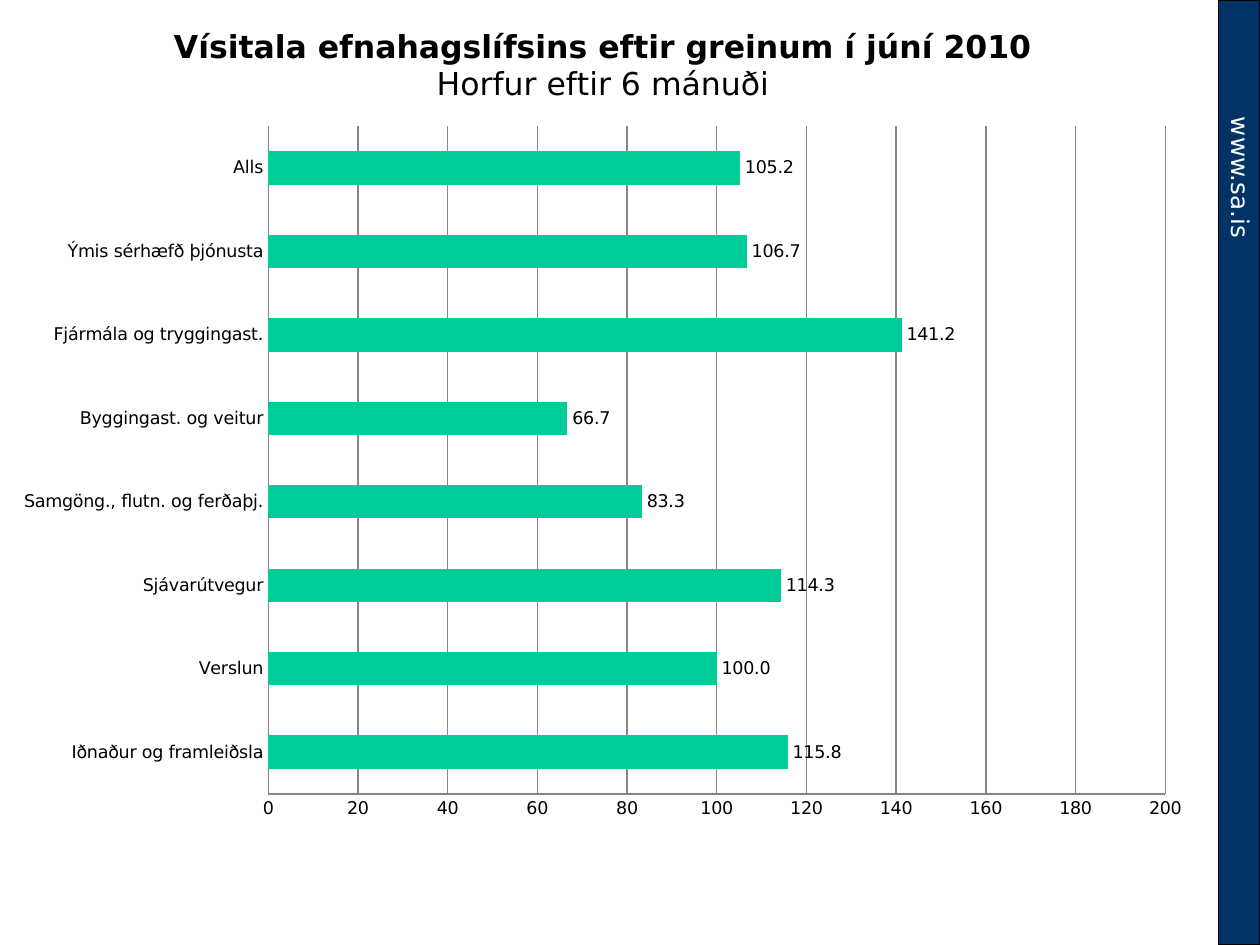
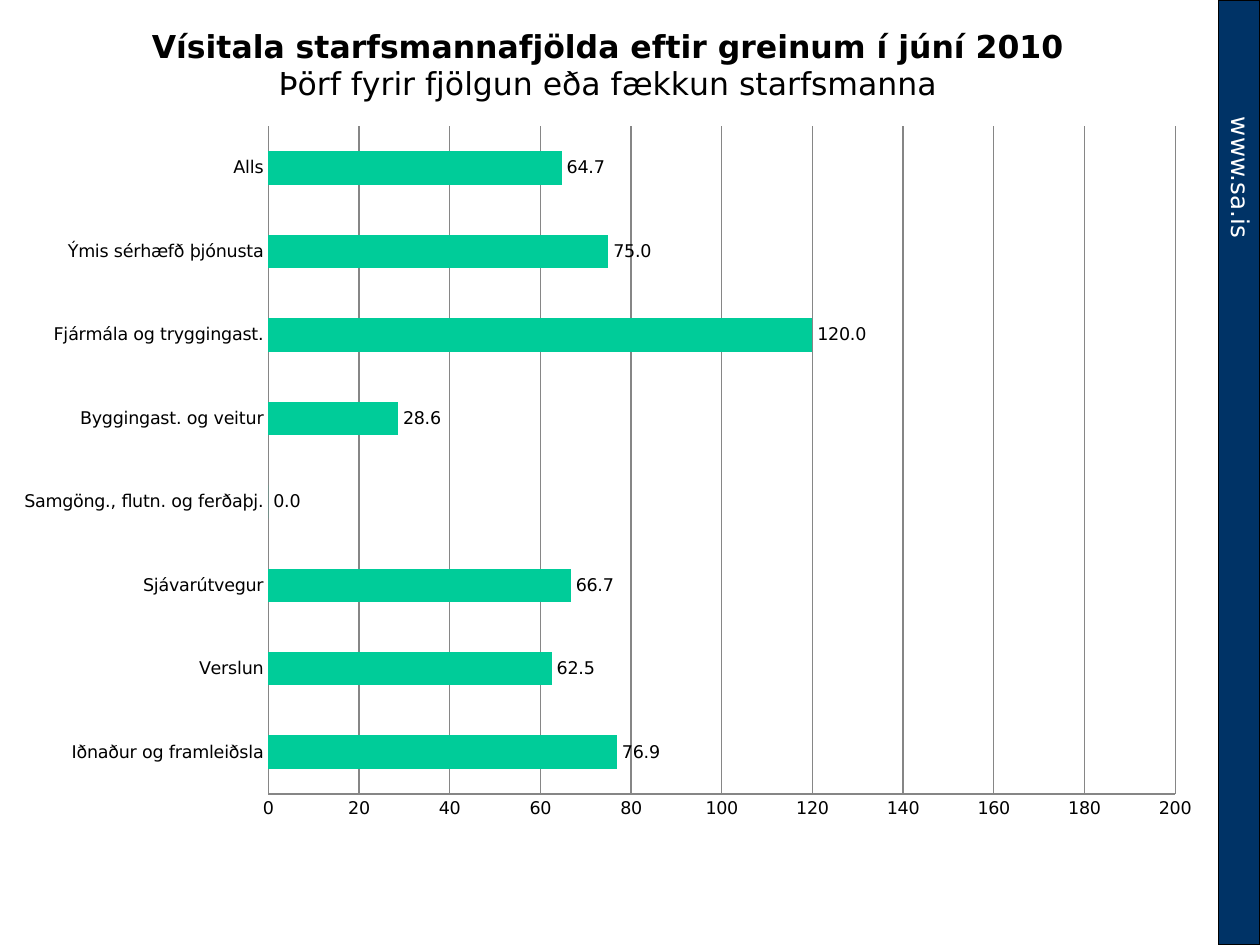
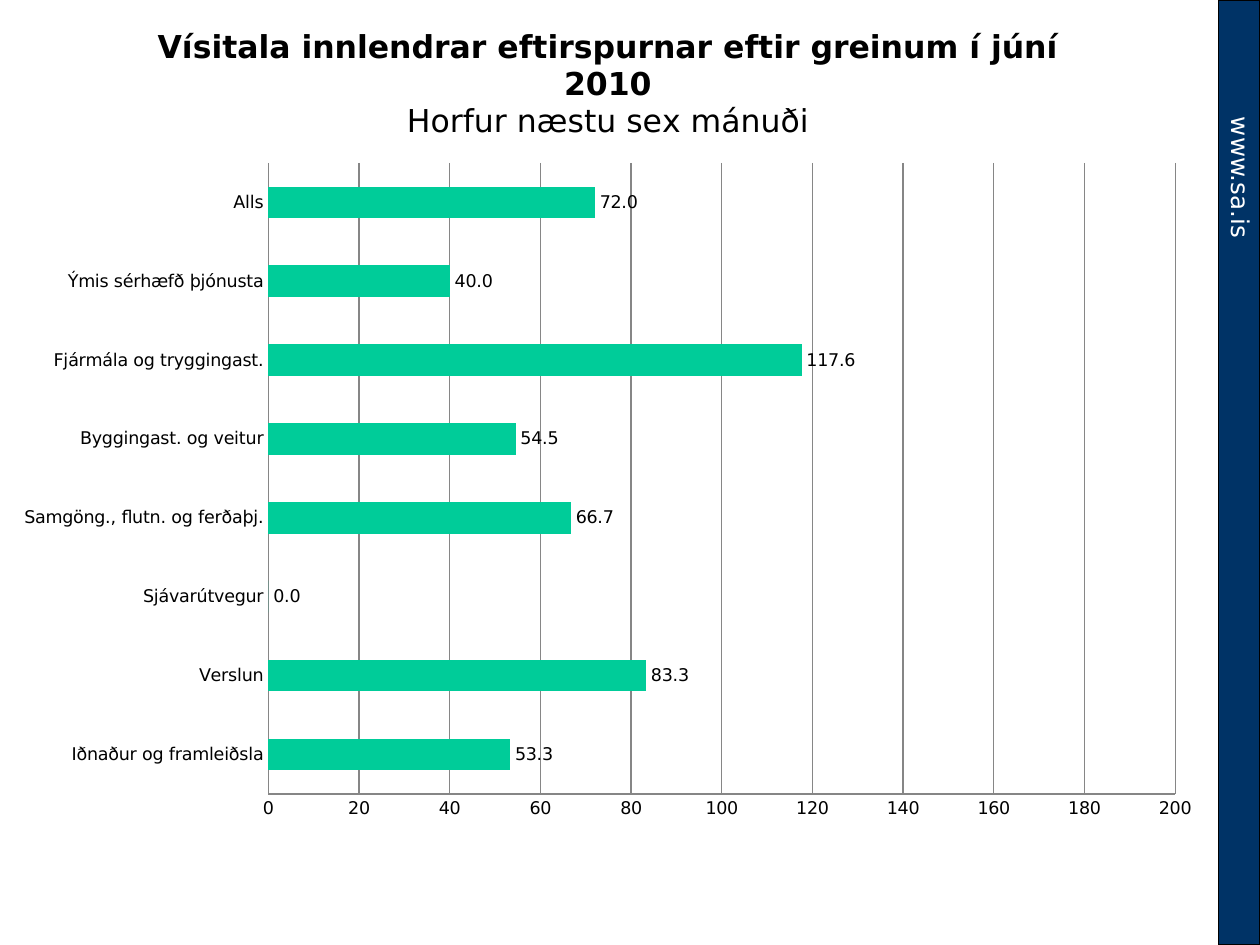
import dataclasses

import pptx
import pptx.chart.axis
import pptx.chart.chart
import pptx.chart.data
import pptx.dml.color
import pptx.enum.chart
import pptx.enum.shapes
import pptx.enum.text
import pptx.slide
import pptx.text.text
import pptx.util

Pt = pptx.util.Pt
RGB = pptx.dml.color.RGBColor


# Theme and shared geometry
@dataclasses.dataclass(frozen=True)
class Theme:
    font: str = "DejaVu Sans"
    text: RGB = RGB(0x00, 0x00, 0x00)
    background: RGB = RGB(0xFF, 0xFF, 0xFF)
    band: RGB = RGB(0x00, 0x33, 0x66)
    bar: RGB = RGB(0x00, 0xCC, 0x99)
    rule: RGB = RGB(0x86, 0x86, 0x86)
    title_size: float = 18
    address_size: float = 14
    label_size: float = 10
    line_width: float = 0.75


THEME = Theme()
SLIDE_WIDTH, SLIDE_HEIGHT = 720, 540
BAND_WIDTH = 23.76
ADDRESS_LENGTH = 131.76
ADDRESS_CENTRE_Y = 125.64
CHART_HEIGHT = 477.36

SECTORS = (
    "Iðnaður og framleiðsla",
    "Verslun",
    "Sjávarútvegur",
    "Samgöng., flutn. og ferðaþj.",
    "Byggingast. og veitur",
    "Fjármála og tryggingast.",
    "Ýmis sérhæfð þjónusta",
    "Alls",
)


# Content of the slides
@dataclasses.dataclass(frozen=True)
class SectorIndex:
    title: str
    subtitle: str
    values: tuple[float, ...]
    width: float = 694.8


INDICES = (
    SectorIndex(
        "Vísitala efnahagslífsins eftir greinum í júní 2010",
        "Horfur eftir 6 mánuði",
        (115.8, 100, 114.3, 83.3, 66.7, 141.2, 106.7, 105.2),
        width=689.04,
    ),
    SectorIndex(
        "Vísitala starfsmannafjölda eftir greinum í júní 2010",
        "Þörf fyrir fjölgun eða fækkun starfsmanna",
        (76.9, 62.5, 66.7, 0, 28.6, 120, 75, 64.7),
    ),
    SectorIndex(
        "Vísitala innlendrar eftirspurnar eftir greinum í júní 2010",
        "Horfur næstu sex mánuði",
        (53.3, 83.3, 0, 66.7, 54.5, 117.6, 40, 72),
    ),
)


# Drawing functions
def style_font(font: pptx.text.text.Font, size: float, color: RGB, bold: bool = False) -> None:
    font.name = THEME.font
    font.size = Pt(size)
    font.bold = bold
    font.color.rgb = color


def draw_side_band(slide: pptx.slide.Slide) -> None:
    band = slide.shapes.add_shape(
        pptx.enum.shapes.MSO_SHAPE.RECTANGLE,
        Pt(SLIDE_WIDTH - BAND_WIDTH), Pt(0), Pt(BAND_WIDTH), Pt(SLIDE_HEIGHT),
    )
    band.shadow.inherit = False
    band.fill.solid()
    band.fill.fore_color.rgb = THEME.band
    band.line.color.rgb = THEME.text
    band.line.width = Pt(THEME.line_width)

    # Web address, turned to run down the band
    address = slide.shapes.add_textbox(
        Pt(SLIDE_WIDTH - BAND_WIDTH / 2 - ADDRESS_LENGTH / 2 + 1),
        Pt(ADDRESS_CENTRE_Y - BAND_WIDTH / 2),
        Pt(ADDRESS_LENGTH), Pt(BAND_WIDTH),
    )
    address.rotation = 90
    address.text_frame.word_wrap = True
    address.text_frame.auto_size = pptx.enum.text.MSO_AUTO_SIZE.SHAPE_TO_FIT_TEXT
    run = address.text_frame.paragraphs[0].add_run()
    run.text = "www.sa.is"
    style_font(run.font, THEME.address_size, THEME.background)


def write_chart_title(chart: pptx.chart.chart.Chart, index: SectorIndex) -> None:
    chart.has_title = True
    chart.chart_title.include_in_layout = False
    frame = chart.chart_title.text_frame
    lines = (frame.paragraphs[0], index.title, True), (frame.add_paragraph(), index.subtitle, False)
    for paragraph, text, bold in lines:
        run = paragraph.add_run()
        run.text = text
        style_font(run.font, THEME.title_size, THEME.text, bold)


def style_axis(axis: pptx.chart.axis.CategoryAxis | pptx.chart.axis.ValueAxis) -> None:
    axis.major_tick_mark = pptx.enum.chart.XL_TICK_MARK.NONE
    axis.minor_tick_mark = pptx.enum.chart.XL_TICK_MARK.NONE
    axis.format.line.color.rgb = THEME.rule
    axis.format.line.width = Pt(THEME.line_width)


def draw_sector_chart(slide: pptx.slide.Slide, index: SectorIndex) -> None:
    data = pptx.chart.data.CategoryChartData(number_format="0.0")
    data.categories = SECTORS
    data.add_series("Series 1", index.values)
    chart = slide.shapes.add_chart(
        pptx.enum.chart.XL_CHART_TYPE.BAR_CLUSTERED,
        Pt(0), Pt(0), Pt(index.width), Pt(CHART_HEIGHT), data,
    ).chart
    style_font(chart.font, THEME.label_size, THEME.text)
    chart.has_legend = False
    write_chart_title(chart, index)

    # Axes and gridlines
    style_axis(chart.category_axis)
    scale = chart.value_axis
    style_axis(scale)
    scale.minimum_scale, scale.maximum_scale, scale.major_unit = 0, 200, 20
    scale.tick_labels.number_format = "0"
    scale.tick_labels.number_format_is_linked = False
    scale.has_major_gridlines = True
    scale.major_gridlines.format.line.color.rgb = THEME.rule
    scale.major_gridlines.format.line.width = Pt(THEME.line_width)

    # Bars and their values
    plot = chart.plots[0]
    plot.vary_by_categories = False
    plot.gap_width = 150
    bars = plot.series[0]
    bars.format.fill.solid()
    bars.format.fill.fore_color.rgb = THEME.bar
    labels = bars.data_labels
    labels.show_value = True
    labels.number_format = "0.0"
    labels.number_format_is_linked = False
    labels.position = pptx.enum.chart.XL_LABEL_POSITION.OUTSIDE_END
    style_font(labels.font, THEME.label_size, THEME.text)


def main() -> None:
    deck = pptx.Presentation()
    deck.slide_width, deck.slide_height = Pt(SLIDE_WIDTH), Pt(SLIDE_HEIGHT)
    for index in INDICES:
        slide = deck.slides.add_slide(deck.slide_layouts[6])
        slide.background.fill.solid()
        slide.background.fill.fore_color.rgb = THEME.background
        draw_side_band(slide)
        draw_sector_chart(slide, index)
    deck.save("out.pptx")


if __name__ == "__main__":
    main()
